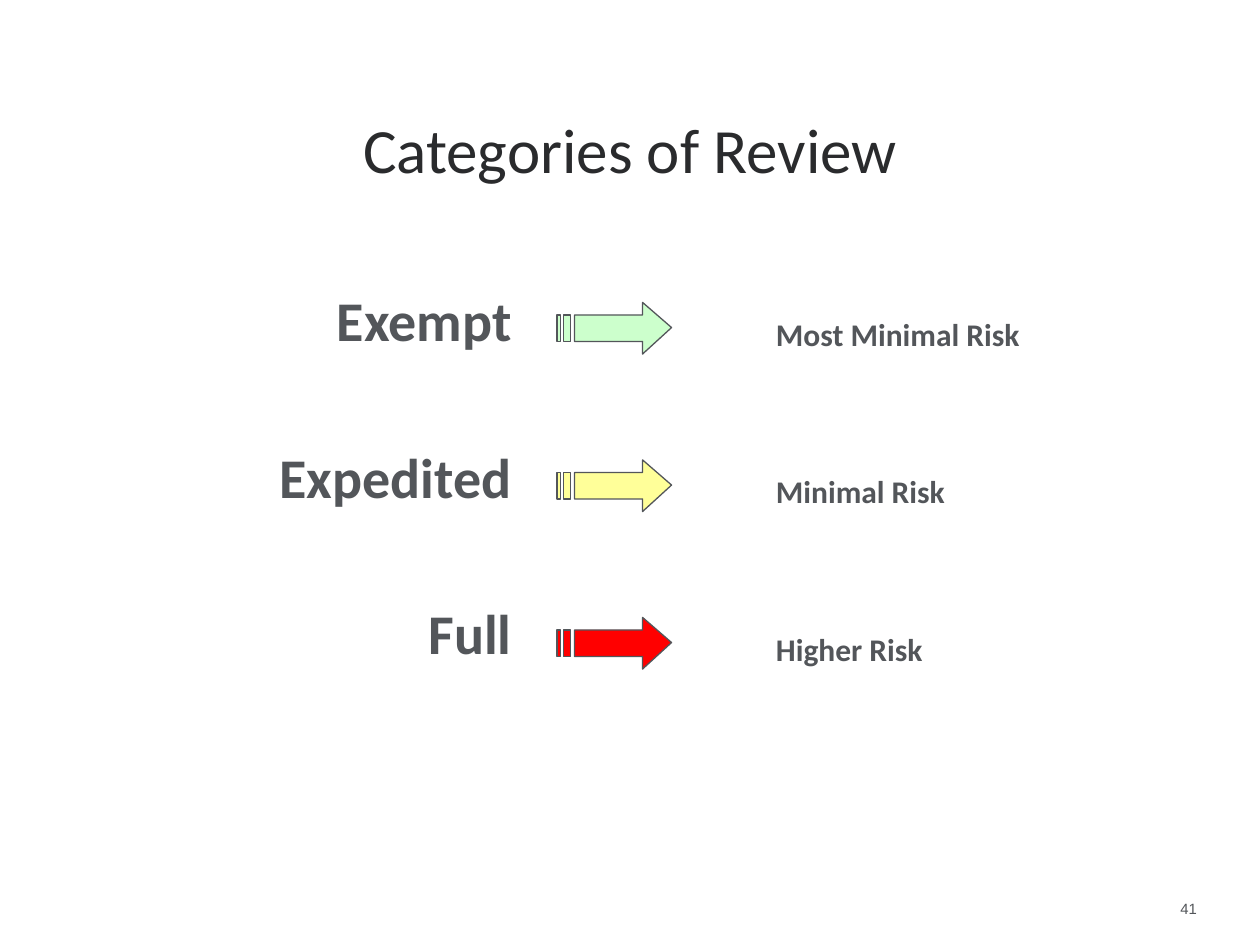
"""Build the slide on categories of review and their levels of risk."""
from pptx import Presentation
from pptx.dml.color import RGBColor
from pptx.enum.text import MSO_ANCHOR, MSO_AUTO_SIZE, PP_ALIGN
from pptx.util import Inches, Pt

LEFT, MID, RIGHT = PP_ALIGN.LEFT, PP_ALIGN.CENTER, PP_ALIGN.RIGHT
TOP, BOTTOM = MSO_ANCHOR.TOP, MSO_ANCHOR.BOTTOM
FIXED = MSO_AUTO_SIZE.NONE

TITLE = "Categories of Review"
PAGE = "41"
ROWS = [
    ("Exempt", "CCFFCC", "Most Minimal Risk"),
    ("Expedited", "FFFF99", "Minimal Risk"),
    ("Full", "FF0000", "Higher Risk"),
]
THEME = {
    "font": "Calibri", "num_font": "Arial",
    "dark": "2A2B2D", "gray": "53565A",
    "title": 36, "label": 32, "risk": 18, "num": 8.5,
    "line": 0.75, "gap": 51,
}
PITCH = 1.25
ARROW_X, ARROW_Y = 4.42, 2.4
HEAD = [(0.68, 0), (0.68, 0.1), (0.14, 0.1), (0.14, 0.31),
        (0.68, 0.31), (0.68, 0.41), (0.91, 0.2)]
BARS = [(0.05, 0.11), (0, 0.03)]


def color(code):
    return RGBColor.from_string(code)


def put_text(box, lines, size, font=THEME["font"], ink=THEME["gray"],
             bold=False, align=LEFT, anchor=TOP, pad=(0.1, 0.05), gap=0):
    frame = box.text_frame
    frame.word_wrap = True
    frame.auto_size = FIXED
    frame.vertical_anchor = anchor
    frame.margin_left = frame.margin_right = Inches(pad[0])
    frame.margin_top = frame.margin_bottom = Inches(pad[1])
    for i, line in enumerate(lines):
        para = frame.add_paragraph() if i else frame.paragraphs[0]
        para.text = line
        para.alignment = align
        para.space_before = Pt(gap if i else 0)
        para.font.name = font
        para.font.size = Pt(size)
        para.font.bold = bold
        para.font.color.rgb = color(ink)


def add_text(slide, place, lines, size, **style):
    box = slide.shapes.add_textbox(*map(Inches, place))
    put_text(box, lines, size, **style)


def add_arrow(slide, x, y, fill):
    bars = [[(a, 0.1), (a, 0.31), (b, 0.31), (b, 0.1)] for a, b in BARS]
    parts = [[(Inches(x + dx), Inches(y + dy)) for dx, dy in part]
             for part in [HEAD, *bars]]
    pen = slide.shapes.build_freeform(*parts[0][0])
    for i, part in enumerate(parts):
        if i:
            pen.move_to(*part[0])
        pen.add_line_segments(part[1:], close=True)
    arrow = pen.convert_to_shape()
    arrow.shadow.inherit = False
    arrow.fill.solid()
    arrow.fill.fore_color.rgb = color(fill)
    arrow.line.color.rgb = color(THEME["gray"])
    arrow.line.width = Pt(THEME["line"])


def main():
    deck = Presentation()
    deck.slide_width, deck.slide_height = Inches(10), Inches(7.5)
    slide = deck.slides.add_slide(deck.slide_layouts[5])

    title = slide.shapes.title
    title.left, title.top = Inches(0.5), Inches(0.88)
    title.width, title.height = Inches(9), Inches(0.7)
    put_text(title, [TITLE], THEME["title"], ink=THEME["dark"],
             align=MID, pad=(0, 0))
    add_text(slide, (8.69, 6.97, 0.81, 0.31), [PAGE], THEME["num"],
             font=THEME["num_font"], align=RIGHT, anchor=BOTTOM, pad=(0, 0))

    add_text(slide, (1.08, 2.22, 3.08, 3.83), [row[0] for row in ROWS],
             THEME["label"], bold=True, align=RIGHT, gap=THEME["gap"])
    for i, (_, fill, risk) in enumerate(ROWS):
        drop = i * PITCH
        add_arrow(slide, ARROW_X, ARROW_Y + drop, fill)
        add_text(slide, (6.06, 2.45 + drop, 2.15, 0.4), [risk],
                 THEME["risk"], bold=True)
    deck.save("out.pptx")


if __name__ == "__main__":
    main()
